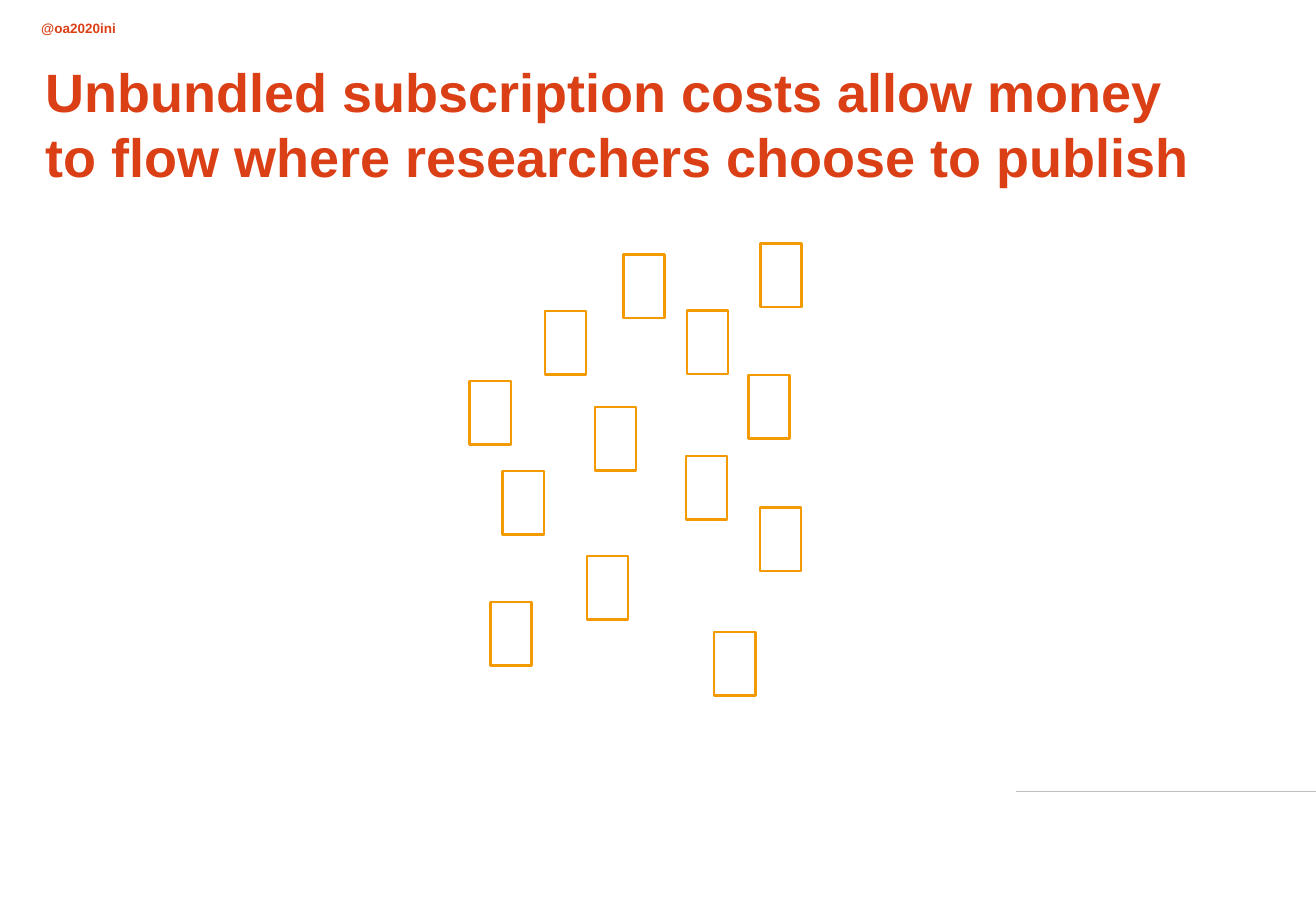
from lxml.etree import SubElement
from pptx import Presentation
from pptx.dml.color import RGBColor
from pptx.enum.shapes import MSO_CONNECTOR as Connector, MSO_SHAPE as Shape
from pptx.enum.text import MSO_ANCHOR as Anchor
from pptx.oxml.ns import qn
from pptx.util import Cm, Pt

RED = RGBColor(0xDB, 0x3F, 0x16)
ORANGE = RGBColor(0xF2, 0x9A, 0x00)
GREY = RGBColor(0xC0, 0xC0, 0xC0)
WHITE = RGBColor(0xFF, 0xFF, 0xFF)

PAGE_WIDTH, PAGE_HEIGHT = 27.51, 19.05
ARTICLE_WIDTH, ARTICLE_HEIGHT = 0.86, 1.33
ARTICLES = [
    (13.03, 5.32), (9.82, 7.97), (15.89, 10.61), (14.34, 9.54), (14.36, 6.49),
    (11.39, 6.5), (12.44, 8.51), (10.51, 9.85), (10.25, 12.59), (12.27, 11.63),
    (14.93, 13.22), (15.65, 7.84),
]
FRONT_ARTICLE = (15.9, 5.09)


def add_text(page, text, left, top, width, height, size, margins, wrap):
    """Add bold red text; margins are left, top, right and bottom in cm."""
    box = page.shapes.add_textbox(Cm(left), Cm(top), Cm(width), Cm(height))
    frame = box.text_frame
    frame.word_wrap = wrap
    frame.vertical_anchor = Anchor.TOP
    (frame.margin_left, frame.margin_top,
     frame.margin_right, frame.margin_bottom) = map(Cm, margins)
    para = frame.paragraphs[0]
    para.text = text
    para.font.name = "Arial"
    para.font.size = Pt(size)
    para.font.bold = True
    para.font.color.rgb = RED


def add_rule(page, left, right, y):
    rule = page.shapes.add_connector(
        Connector.STRAIGHT, Cm(left), Cm(y), Cm(right), Cm(y))
    rule.line.color.rgb = GREY
    rule.line.width = Pt(0.5)
    SubElement(rule._element.spPr, qn("a:effectLst"))


def add_article(page, left, top):
    article = page.shapes.add_shape(
        Shape.RECTANGLE, Cm(left), Cm(top),
        Cm(ARTICLE_WIDTH), Cm(ARTICLE_HEIGHT))
    article.shadow.inherit = False
    article.fill.background()
    article.line.color.rgb = ORANGE
    article.line.width = Pt(1.5)
    return article


def main():
    deck = Presentation()
    deck.slide_width, deck.slide_height = Cm(PAGE_WIDTH), Cm(PAGE_HEIGHT)
    page = deck.slides.add_slide(deck.slide_layouts[6])

    add_text(page, "@oa2020ini", 0.86, 0.41, 1.9, 0.43, 8,
             margins=(0, 0, 0, 0), wrap=False)
    add_rule(page, 21.23, PAGE_WIDTH, 16.56)
    add_text(
        page,
        "Unbundled subscription costs allow money to flow where "
        "researchers choose to publish",
        0.69, 1.09, 24.82, 1.93, 32,
        margins=(0.27, 0.13, 0.25, 0.13), wrap=True)

    for left, top in ARTICLES:
        add_article(page, left, top)
    front = add_article(page, *FRONT_ARTICLE)
    front.fill.solid()
    front.fill.fore_color.rgb = WHITE

    deck.save("out.pptx")


if __name__ == "__main__":
    main()
